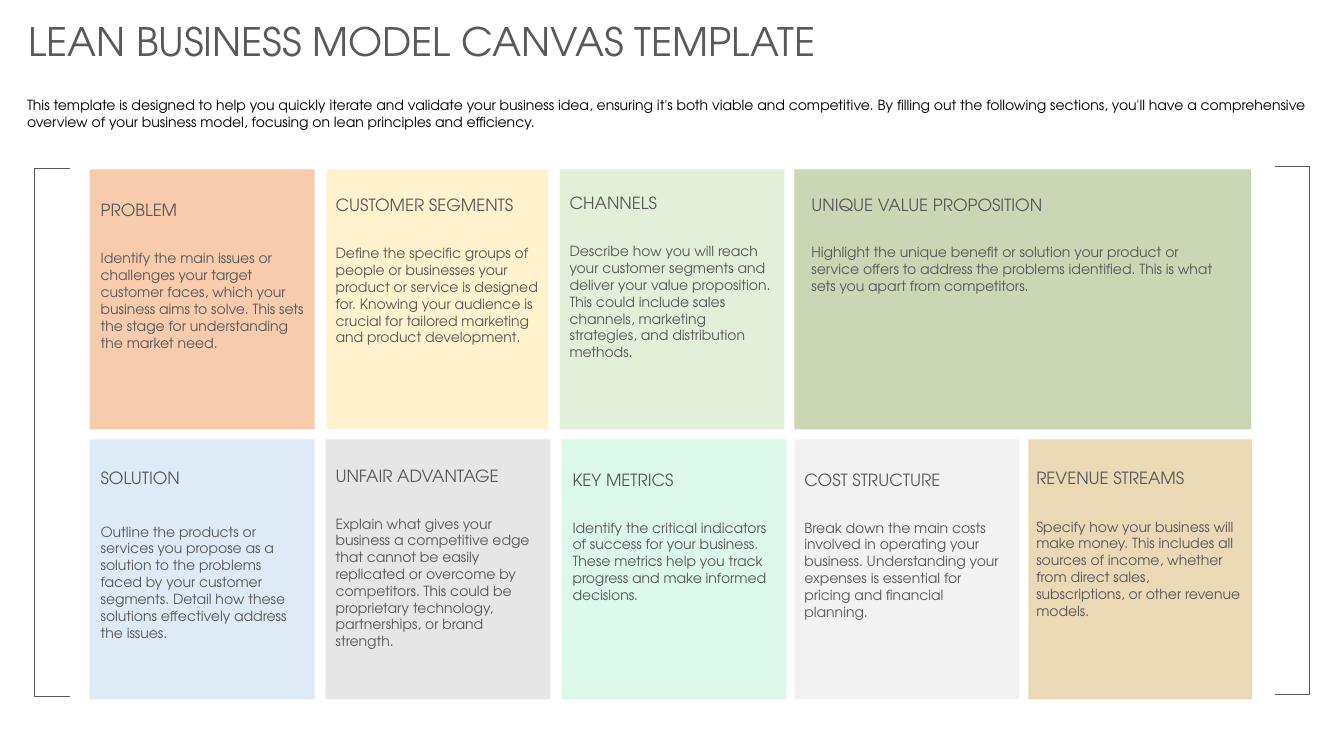
from lxml import etree
from pptx import Presentation
from pptx.dml.color import RGBColor
from pptx.enum.shapes import MSO_CONNECTOR, MSO_SHAPE
from pptx.enum.text import MSO_ANCHOR, MSO_AUTO_SIZE, PP_ALIGN
from pptx.oxml.ns import qn
from pptx.util import Inches, Pt

RECT = MSO_SHAPE.RECTANGLE
STRAIGHT = MSO_CONNECTOR.STRAIGHT
TOP = MSO_ANCHOR.TOP
LEFT = PP_ALIGN.LEFT
FIT_SHAPE = MSO_AUTO_SIZE.SHAPE_TO_FIT_TEXT
NO_FIT = MSO_AUTO_SIZE.NONE

GREY = RGBColor(0x59, 0x59, 0x59)
BLACK = RGBColor(0x00, 0x00, 0x00)
ORANGE = RGBColor(0xF8, 0xCB, 0xAD)
YELLOW = RGBColor(0xFF, 0xF2, 0xCC)
GREEN = RGBColor(0xE2, 0xF0, 0xD9)
OLIVE = RGBColor(0xCB, 0xD6, 0xB5)
BLUE = RGBColor(0xDE, 0xEB, 0xF7)
SILVER = RGBColor(0xE7, 0xE6, 0xE6)
MINT = RGBColor(0xDC, 0xF8, 0xEB)
PALE = RGBColor(0xF2, 0xF2, 0xF2)
TAN = RGBColor(0xEB, 0xD9, 0xB6)

ROW_1, ROW_2 = 1.68, 4.36
CARD_H = 2.58
HEADING_H = 0.3

INTRO = ("This template is designed to help you quickly iterate and validate your business idea, "
         "ensuring it's both viable and competitive. By filling out the following sections, you'll "
         "have a comprehensive overview of your business model, focusing on lean principles and "
         "efficiency.")

CARDS = [
    (ORANGE, 0.89, ROW_1, 2.23, 0.9, 2.22, 1.93, 2.43, 1.28, "PROBLEM",
     "Identify the main issues or challenges your target customer faces, which your business "
     "aims to solve. This sets the stage for understanding the market need."),
    (YELLOW, 3.24, ROW_1, 2.2, 3.23, 2.22, 1.88, 2.38, 1.11, "CUSTOMER SEGMENTS",
     "Define the specific groups of people or businesses your product or service is designed "
     "for. Knowing your audience is crucial for tailored marketing and product development."),
    (GREEN, 5.55, ROW_1, 2.23, 5.55, 2.22, 1.86, 2.36, 1.28, "CHANNELS",
     "Describe how you will reach your customer segments and deliver your value proposition. "
     "This could include sales channels, marketing strategies, and distribution methods."),
    (OLIVE, 7.88, ROW_1, 4.53, 7.95, 4.3, 1.88, 2.37, 0.61, "UNIQUE VALUE PROPOSITION",
     "Highlight the unique benefit or solution your product or service offers to address the "
     "problems identified. This is what sets you apart from competitors."),
    (BLUE, 0.89, ROW_2, 2.23, 0.9, 2.2, 4.59, 5.14, 1.45, "SOLUTION",
     "Outline the products or services you propose as a solution to the problems faced by your "
     "customer segments. Detail how these solutions effectively address the issues."),
    (SILVER, 3.23, ROW_2, 2.23, 3.23, 2.2, 4.57, 5.06, 1.45, "UNFAIR ADVANTAGE",
     "Explain what gives your business a competitive edge that cannot be easily replicated or "
     "overcome by competitors. This could be proprietary technology, partnerships, or brand "
     "strength."),
    (MINT, 5.57, ROW_2, 2.23, 5.58, 2.22, 4.61, 5.1, 0.94, "KEY METRICS",
     "Identify the critical indicators of success for your business. These metrics help you "
     "track progress and make informed decisions."),
    (PALE, 7.88, ROW_2, 2.23, 7.88, 2.22, 4.61, 5.1, 1.11, "COST STRUCTURE",
     "Break down the main costs involved in operating your business. Understanding your "
     "expenses is essential for pricing and financial planning."),
    (TAN, 10.2, ROW_2, 2.22, 10.18, 2.22, 4.59, 5.09, 1.11, "REVENUE STREAMS",
     "Specify how your business will make money. This includes all sources of income, whether "
     "from direct sales, subscriptions, or other revenue models."),
]

BRACKETS = [(0.34, 0.69, 1.67, 6.91), (12.99, 12.65, 1.65, 6.89)]


class Canvas:
    font = "TeX Gyre Adventor"

    def __init__(self, slide):
        self.s = slide

    def set_text(self, tf, text, size, color):
        tf.word_wrap = True
        tf.vertical_anchor = TOP
        p = tf.paragraphs[0]
        p.text = text
        p.alignment = LEFT
        p.font.name = self.font
        p.font.size = Pt(size)
        p.font.color.rgb = color

    def title(self, x, y, w, h, text):
        sp = self.s.shapes.title
        sp.left, sp.top, sp.width, sp.height = map(Inches, (x, y, w, h))
        sp.text_frame.auto_size = NO_FIT
        self.set_text(sp.text_frame, text, 28, GREY)

    def text(self, x, y, w, h, text, size, color=GREY):
        sp = self.s.shapes.add_textbox(*map(Inches, (x, y, w, h)))
        sp.text_frame.auto_size = FIT_SHAPE
        self.set_text(sp.text_frame, text, size, color)

    def block(self, x, y, w, h, color):
        sp = self.s.shapes.add_shape(RECT, *map(Inches, (x, y, w, h)))
        sp.shadow.inherit = False
        sp.fill.solid()
        sp.fill.fore_color.rgb = color
        sp.line.fill.background()

    def card(self, color, x, y, w, text_x, text_w, heading_y, body_y, body_h, heading, body):
        self.block(x, y, w, CARD_H, color)
        self.text(text_x, heading_y, text_w, HEADING_H, heading, 12)
        self.text(text_x, body_y, text_w, body_h, body, 10)

    def bracket(self, spine, tip, top, bottom):
        group = self.s.shapes.add_group_shape()
        for x1, y1, x2, y2 in ((spine, top, tip, top),
                               (spine, bottom, tip, bottom),
                               (spine, top, spine, bottom)):
            line = group.shapes.add_connector(STRAIGHT, *map(Inches, (x1, y1, x2, y2)))
            line.line.color.rgb = GREY
            line.line.width = Pt(1)
            etree.SubElement(line._element.spPr, qn("a:effectLst"))


def main():
    prs = Presentation()
    prs.slide_width, prs.slide_height = Inches(13.33), Inches(7.5)
    canvas = Canvas(prs.slides.add_slide(prs.slide_layouts[5]))
    canvas.title(0.18, 0.12, 12.95, 0.57, "LEAN BUSINESS MODEL CANVAS TEMPLATE")
    canvas.text(0.17, 0.91, 12.9, 0.44, INTRO, 10, BLACK)
    for card in CARDS:
        canvas.card(*card)
    for bracket in BRACKETS:
        canvas.bracket(*bracket)
    prs.save("out.pptx")


if __name__ == "__main__":
    main()
